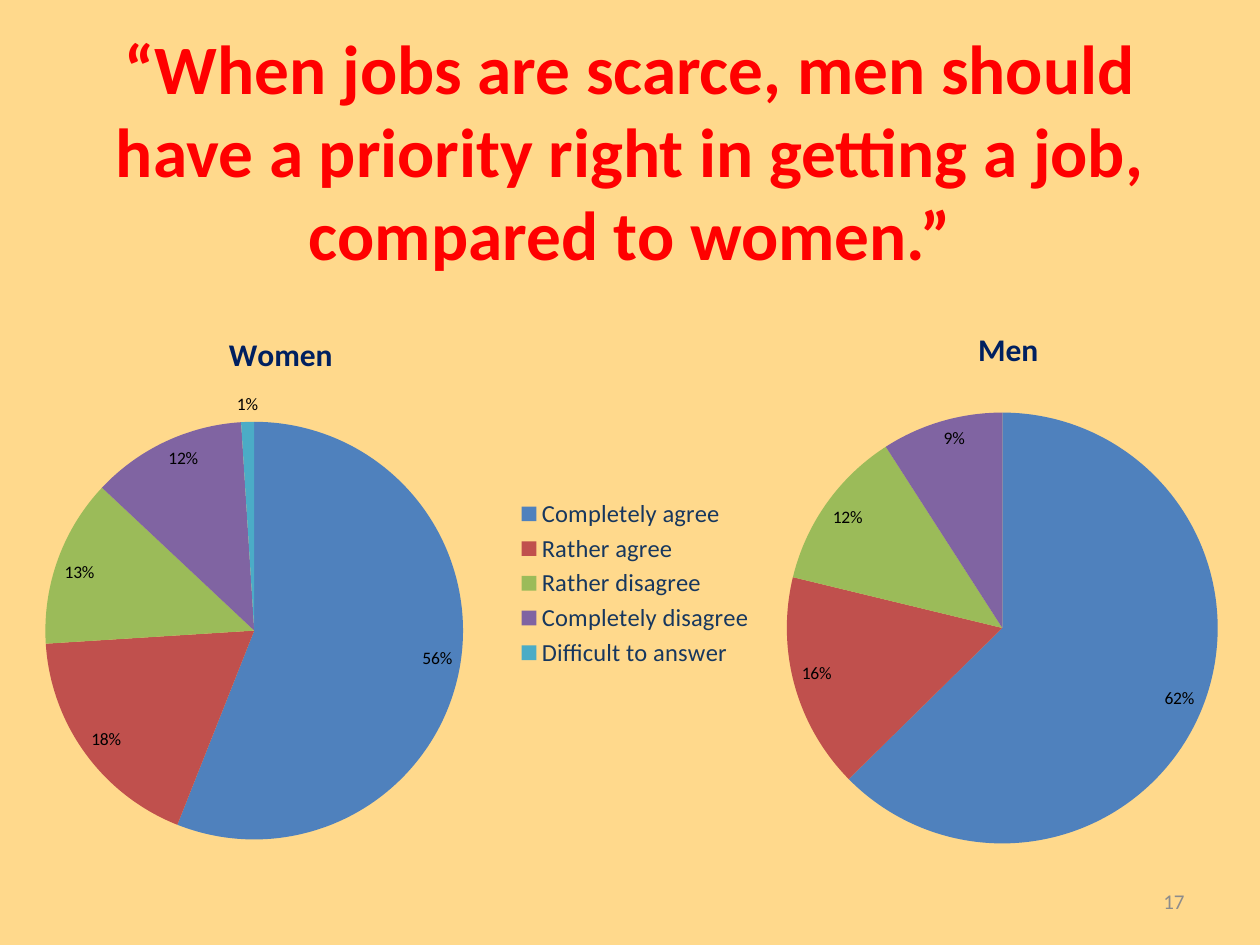
from dataclasses import dataclass
from typing import Optional

from lxml.etree import SubElement
from pptx import Presentation
from pptx.chart.chart import Chart
from pptx.chart.data import CategoryChartData
from pptx.dml.color import RGBColor
from pptx.enum.chart import XL_CHART_TYPE as ChartType
from pptx.enum.chart import XL_LABEL_POSITION as LabelPosition
from pptx.enum.chart import XL_LEGEND_POSITION as LegendPosition
from pptx.enum.text import MSO_ANCHOR as Anchor
from pptx.enum.text import PP_ALIGN as Align
from pptx.oxml import parse_xml
from pptx.oxml.ns import nsdecls, qn
from pptx.util import Inches, Pt

WIDTH, HEIGHT = 10, 7.5
FONT = "Calibri"
SLICE_COLOURS = ("4F81BD", "C0504D", "9BBB59", "8064A2", "4BACC6")
ANSWERS = (
    "Completely agree",
    "Rather agree",
    "Rather disagree",
    "Completely disagree",
    "Difficult to answer",
)


@dataclass(frozen=True)
class Area:
    """Left, top, width and height, in inches or as shares of a chart."""
    left: float
    top: float
    width: float
    height: float

    def lengths(self):
        return [Inches(n) for n in (self.left, self.top, self.width, self.height)]


@dataclass(frozen=True)
class Pie:
    title: str
    area: Area
    categories: tuple[str, ...]
    values: tuple[float, ...]
    plot: Area
    title_corner: tuple[float, float]
    legend: Optional[Area] = None


PIES = (
    Pie("Women", Area(-0.08, 2.42, 6.17, 4.42), ANSWERS,
        (0.56, 0.18, 0.13, 0.12, 0.01),
        Area(0.07, 0.21, 0.54, 0.75), (0.3, 0.04), Area(0.67, 0.34, 0.32, 0.32)),
    Pie("Men", Area(5.58, 2.33, 4.75, 4.5), ("1", "2", "3", "4", "5"),
        (0.62, 0.16, 0.12, 0.09, 0),
        Area(0.14, 0.21, 0.72, 0.76), (0.45, 0.05)),
)


def colour(code: str) -> RGBColor:
    return RGBColor.from_string(code)


def style_font(font, size: float, code: str, bold: bool = False) -> None:
    font.name, font.size, font.bold = FONT, Pt(size), bold
    font.color.rgb = colour(code)


def add_text(slide, area: Area, text: str, size: float, code: str,
             align: Align, bold: bool = False) -> None:
    box = slide.shapes.add_textbox(*area.lengths())
    frame = box.text_frame
    frame.word_wrap = True
    frame.vertical_anchor = Anchor.MIDDLE
    para = frame.paragraphs[0]
    para.text, para.alignment = text, align
    style_font(para.font, size, code, bold)


def place(chart: Chart, part: str, **shares: float) -> None:
    """Fix a chart part (plotArea, title or legend) at shares of the chart."""
    parent = chart.element.find(".//" + qn(f"c:{part}"))
    old = parent.find(qn("c:layout"))
    if old is not None:
        parent.remove(old)
    layout = parse_xml(f"<c:layout {nsdecls('c')}><c:manualLayout/></c:layout>")
    settings = {"layoutTarget": "inner"} if part == "plotArea" else {}
    settings |= {"xMode": "edge", "yMode": "edge"} | shares
    for name, value in settings.items():
        SubElement(layout[0], qn(f"c:{name}")).set("val", str(value))
    overlay = parent.find(qn("c:overlay"))
    if overlay is None:
        parent.insert(0, layout)
    else:
        overlay.addprevious(layout)


def place_area(chart: Chart, part: str, area: Area) -> None:
    place(chart, part, x=area.left, y=area.top, w=area.width, h=area.height)


def add_pie(slide, pie: Pie) -> None:
    data = CategoryChartData(number_format="0%")
    data.categories = pie.categories
    data.add_series(pie.title, pie.values)
    chart = slide.shapes.add_chart(ChartType.PIE, *pie.area.lengths(), data).chart
    style_font(chart.font, 10, "000000")

    chart.has_title = True
    para = chart.chart_title.text_frame.paragraphs[0]
    para.text = pie.title
    style_font(para.font, 18, "002060", bold=True)
    chart.chart_title.include_in_layout = False
    x, y = pie.title_corner
    place(chart, "title", x=x, y=y)
    place_area(chart, "plotArea", pie.plot)

    plot = chart.plots[0]
    plot.vary_by_categories = True
    series = plot.series[0]
    for index, code in enumerate(SLICE_COLOURS):
        fill = series.points[index].format.fill
        fill.solid()
        fill.fore_color.rgb = colour(code)
    labels = series.data_labels
    labels.show_value = True
    labels.show_percentage = False
    labels.number_format, labels.number_format_is_linked = "0%", False
    labels.position = LabelPosition.INSIDE_END
    thinnest = series.points[len(SLICE_COLOURS) - 1]
    thinnest.data_label.position = LabelPosition.OUTSIDE_END

    chart.has_legend = pie.legend is not None
    if pie.legend:
        chart.legend.position = LegendPosition.RIGHT
        chart.legend.include_in_layout = False
        style_font(chart.legend.font, 14, "17375E")
        place_area(chart, "legend", pie.legend)


def main() -> None:
    deck = Presentation()
    deck.slide_width, deck.slide_height = Inches(WIDTH), Inches(HEIGHT)
    slide = deck.slides.add_slide(deck.slide_layouts[6])
    background = slide.background.fill
    background.solid()
    background.fore_color.rgb = colour("FFD98C")

    add_text(slide, Area(0.05 * WIDTH, 0.04 * HEIGHT, 0.9 * WIDTH, 1.78),
             "“When jobs are scarce, men should have a priority right in "
             "getting a job, compared to women.”",
             39.6, "FF0000", Align.CENTER, bold=True)
    for pie in PIES:
        add_pie(slide, pie)
    add_text(slide, Area(7.17, 6.95, 2.33, 0.4), "17", 12, "8C8C8C", Align.RIGHT)
    deck.save("out.pptx")


if __name__ == "__main__":
    main()
